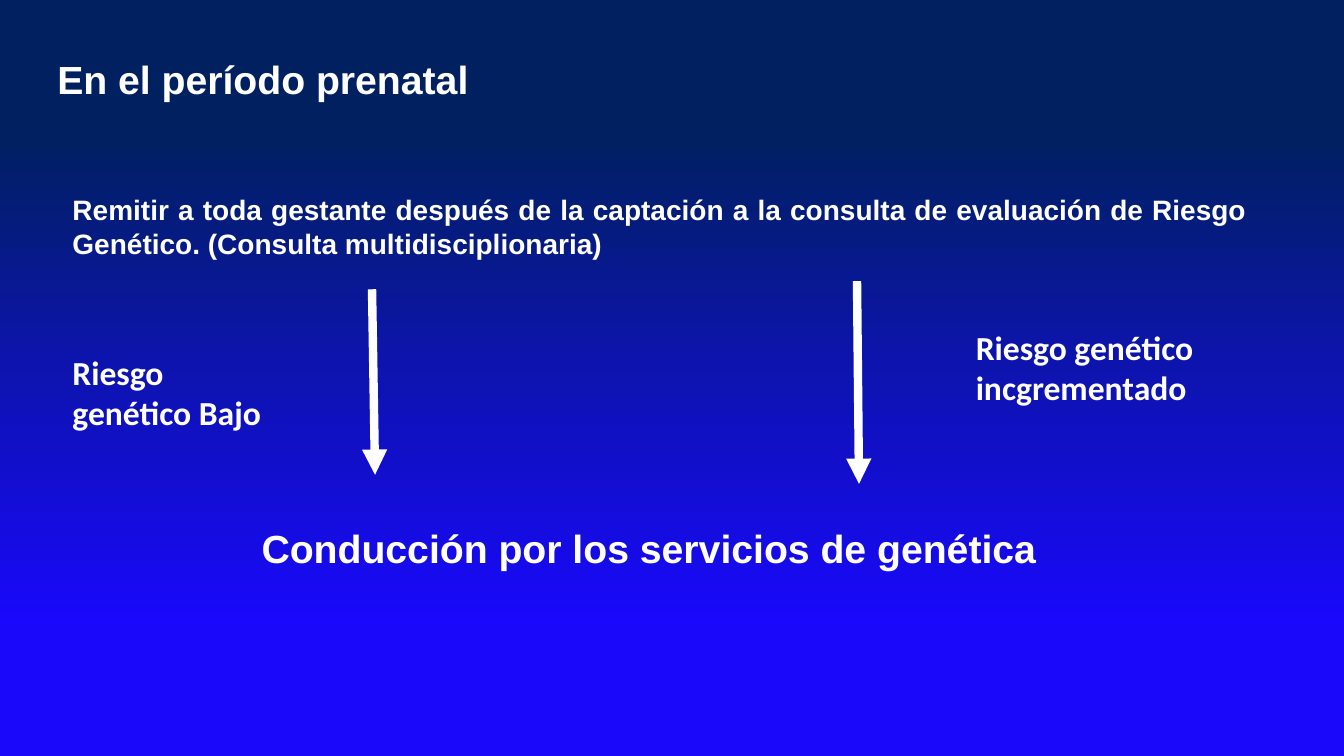
"""Builds a slide on genetic risk care in the prenatal period."""
import copy

import lxml.etree
import pptx
import pptx.dml.color
import pptx.enum.shapes
import pptx.enum.text
import pptx.oxml.ns
import pptx.util

Inches = pptx.util.Inches
Align = pptx.enum.text.PP_ALIGN
qn = pptx.oxml.ns.qn

WHITE = "FFFFFF"
STOPS = [(0.18, "002060"), (0.48, "0D14AD"), (0.82, "1908FA")]
TEXTS = [
    ("Remitir a toda gestante después de la captación a la consulta de "
     "evaluación de Riesgo Genético. (Consulta multidisciplionaria)",
     (0.62, 1.86, 11.85, 0.77), "Arial", 20, Align.JUSTIFY),
    ("En el período prenatal", (0.47, 0.5, 6.26, 0.57), "Arial", 28, Align.LEFT),
    ("Conducción por los servicios de genética",
     (2.29, 5.15, 8.29, 0.57), "Arial", 28, Align.CENTER),
    ("Riesgo genético Bajo", (0.62, 3.44, 2.19, 0.91), "Calibri", 24, Align.LEFT),
    ("Riesgo genético incgrementado",
     (9.58, 3.19, 2.54, 0.91), "Calibri", 24, Align.LEFT),
]
ARROWS = [(3.69, 2.87, 3.72, 4.71), (8.5, 2.79, 8.52, 4.8)]


def tint(color, code):
    color.rgb = pptx.dml.color.RGBColor.from_string(code)


def paint(slide):
    fill = slide.background.fill
    fill.gradient()
    fill.gradient_angle = 270
    group = next(slide.element.iter(qn("a:gsLst")))
    while len(group) < len(STOPS):
        group.append(copy.deepcopy(group[0]))
    for stop, (place, code) in zip(fill.gradient_stops, STOPS):
        stop.position = place
        tint(stop.color, code)


def write(slide, text, box, face, size, align):
    frame = slide.shapes.add_textbox(*map(Inches, box)).text_frame
    frame.word_wrap = True
    frame.auto_size = pptx.enum.text.MSO_AUTO_SIZE.SHAPE_TO_FIT_TEXT
    para = frame.paragraphs[0]
    para.alignment = align
    run = para.add_run()
    run.text = text
    look = {"name": face, "size": pptx.util.Pt(size), "bold": True}
    for key, value in look.items():
        setattr(run.font, key, value)
    tint(run.font.color, WHITE)


def point(slide, ends):
    kind = pptx.enum.shapes.MSO_CONNECTOR.STRAIGHT
    arrow = slide.shapes.add_connector(kind, *map(Inches, ends))
    arrow.line.width = pptx.util.Pt(6)
    tint(arrow.line.color, WHITE)
    props = arrow.element.spPr
    line = props.find(qn("a:ln"))
    lxml.etree.SubElement(line, qn("a:tailEnd"), type="triangle")
    lxml.etree.SubElement(props, qn("a:effectLst"))


def main():
    deck = pptx.Presentation()
    deck.slide_width, deck.slide_height = Inches(13.33), Inches(7.5)
    slide = deck.slides.add_slide(deck.slide_layouts[6])
    paint(slide)
    for item in TEXTS:
        write(slide, *item)
    for ends in ARROWS:
        point(slide, ends)
    deck.save("out.pptx")


if __name__ == "__main__":
    main()
